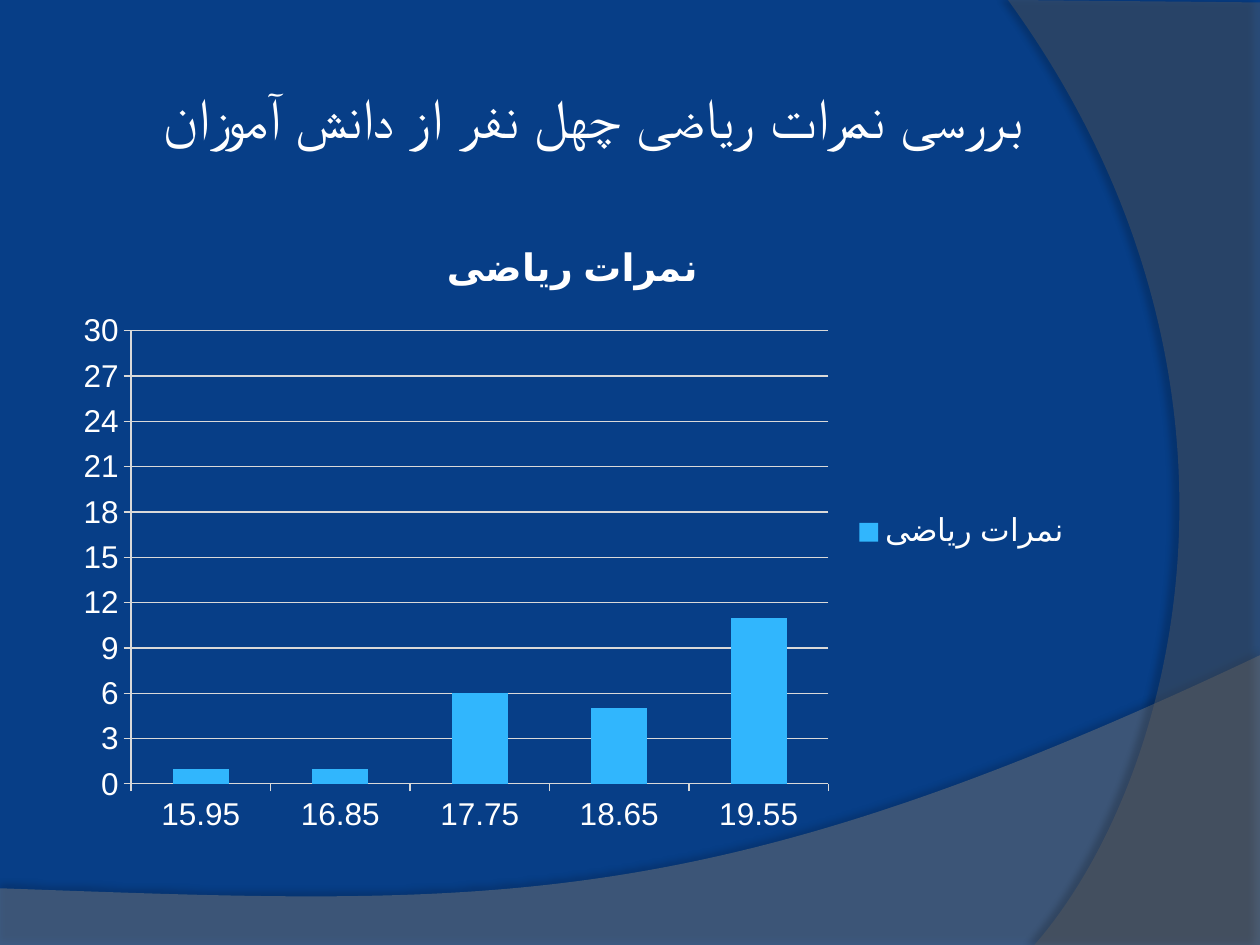
"""Builds a slide with a column chart of the maths marks of forty students."""
from lxml.etree import SubElement
from pptx import Presentation
from pptx.chart.data import CategoryChartData
from pptx.dml.color import RGBColor
from pptx.enum.chart import XL_CHART_TYPE as Chart, XL_LEGEND_POSITION as Legend
from pptx.enum.chart import XL_TICK_LABEL_POSITION as Labels, XL_TICK_MARK as Tick
from pptx.enum.text import MSO_ANCHOR as Anchor, PP_ALIGN as Align
from pptx.oxml.ns import qn
from pptx.util import Inches, Pt

NAVY = RGBColor(0x07, 0x3E, 0x87)
WHITE = RGBColor(0xFF, 0xFF, 0xFF)
SKY = RGBColor(0x31, 0xB6, 0xFD)
GRID = RGBColor(0xD9, 0xD9, 0xD9)
GREY = RGBColor(0x7F, 0x7F, 0x7F)
DARK = RGBColor(0x5E, 0x5E, 0x5E)

WIDTH, HEIGHT = 10, 7.5
TITLE = "بررسی نمرات ریاضی چهل نفر از دانش آموزان"
SERIES = "نمرات ریاضی "
MARKS = {"15.95": 1, "16.85": 1, "17.75": 6, "18.65": 5, "19.55": 11}
TITLE_BOX = (0.5, 0.3, 8.42, 1.25)
CHART_BOX = (0.5, 1.75, 8.17, 4.95)
WAVES = [
    dict(corners=[(0, 7.05), (0, 7.51), (10, 7.51), (10, 5.2)],
         curve=[(5.59, 7.29), (3.91, 7.19), (0, 7.05)],
         color=GREY, alpha=45, shadow=(35, 4, 3.5, 270)),
    dict(corners=[(8, 0), (10, 0.02), (10, 7.5), (8.21, 7.5)],
         curve=[(9.35, 6.19), (10.18, 3), (8, 0)],
         color=DARK, alpha=40, shadow=(45, 4, 4, 180)),
]


def set_alpha(color, percent):
    SubElement(color, qn("a:alpha")).set("val", str(percent * 1000))


def close_with_curve(sp, points):
    end = next(sp.element.iter(qn("a:close")))
    outline = end.getparent()
    bezier = SubElement(outline, qn("a:cubicBezTo"))
    for x, y in points:
        SubElement(bezier, qn("a:pt"), x=str(Inches(x) - sp.left), y=str(Inches(y) - sp.top))
    outline.append(end)


def add_wave(s, corners, curve, color, alpha, shadow):
    start, *rest = [(Inches(x), Inches(y)) for x, y in corners]
    builder = s.shapes.build_freeform(*start)
    builder.add_line_segments(rest, close=True)
    sp = builder.convert_to_shape()
    close_with_curve(sp, curve)
    sp.fill.solid()
    sp.fill.fore_color.rgb = color
    sp.line.fill.background()
    sp.shadow.inherit = False
    props = sp.element.spPr
    set_alpha(props.find(f"{qn('a:solidFill')}/{qn('a:srgbClr')}"), alpha)
    opacity, blur, dist, angle = shadow
    outer = SubElement(props.find(qn("a:effectLst")), qn("a:outerShdw"),
                       blurRad=str(Pt(blur)), dist=str(Pt(dist)),
                       dir=str(angle * 60000), algn="ctr", rotWithShape="0")
    set_alpha(SubElement(outer, qn("a:srgbClr"), val="000000"), opacity)


def style(font, size, name, bold=False):
    font.size, font.name, font.bold = Pt(size), name, bold
    font.color.rgb = WHITE


def add_title(s):
    tf = s.shapes.add_textbox(*map(Inches, TITLE_BOX)).text_frame
    tf.word_wrap = True
    tf.vertical_anchor = Anchor.MIDDLE
    tf.margin_left = tf.margin_right = Inches(0.05)
    p = tf.paragraphs[0]
    p.text = TITLE
    p.alignment = Align.CENTER
    p._p.get_or_add_pPr().set("rtl", "1")
    r = p.runs[0]
    style(r.font, 32, "Lato")
    SubElement(r._r.get_or_add_rPr(), qn("a:cs"), typeface="Arial")


def add_marks_chart(s):
    data = CategoryChartData()
    data.categories = list(MARKS)
    data.add_series(SERIES, list(MARKS.values()))
    chart = s.shapes.add_chart(Chart.COLUMN_CLUSTERED, *map(Inches, CHART_BOX), data).chart
    style(chart.font, 18, "Arial")
    chart.has_title = True
    p = chart.chart_title.text_frame.paragraphs[0]
    p.text = SERIES
    style(p.runs[0].font, 21.6, "Arial", bold=True)
    chart.has_legend = True
    chart.legend.position = Legend.RIGHT
    chart.legend.include_in_layout = False

    plot = chart.plots[0]
    plot.gap_width = 150
    plot.vary_by_categories = False
    fill = plot.series[0].format.fill
    fill.solid()
    fill.fore_color.rgb = SKY

    values = chart.value_axis
    values.minimum_scale, values.maximum_scale, values.major_unit = 0, 30, 3
    values.tick_label_position = Labels.LOW
    values.has_major_gridlines = True
    for axis in (chart.category_axis, values):
        axis.major_tick_mark = Tick.OUTSIDE
        axis.format.line.color.rgb = GRID
    values.major_gridlines.format.line.color.rgb = GRID


def main():
    prs = Presentation()
    prs.slide_width, prs.slide_height = Inches(WIDTH), Inches(HEIGHT)
    s = prs.slides.add_slide(prs.slide_layouts[6])
    s.background.fill.solid()
    s.background.fill.fore_color.rgb = NAVY
    for wave in WAVES:
        add_wave(s, **wave)
    add_title(s)
    add_marks_chart(s)
    prs.save("out.pptx")


if __name__ == "__main__":
    main()
